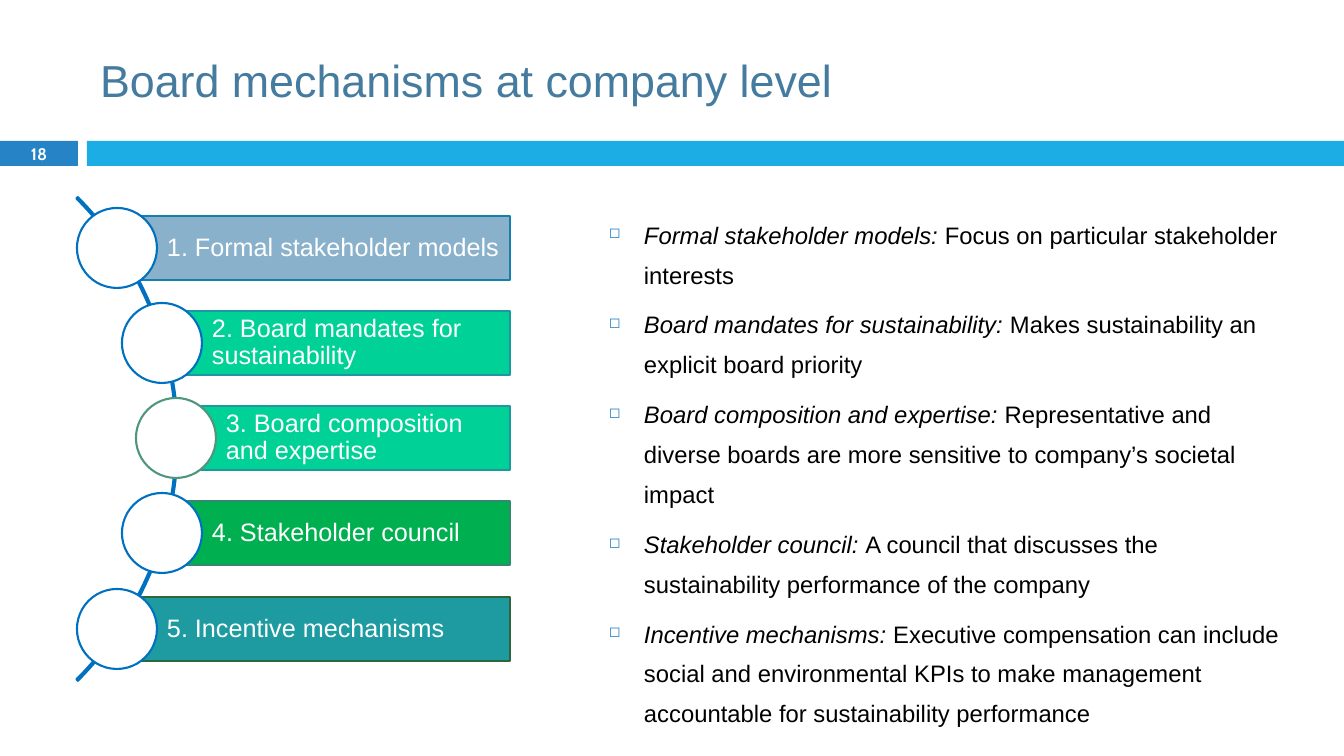
"""Build the slide on board mechanisms at company level."""
from dataclasses import dataclass

from lxml import etree
from pptx import Presentation
from pptx import util as u
from pptx.dml.color import RGBColor
from pptx.enum import shapes, text
from pptx.oxml.ns import qn

EMU_PER_PX = 914400 / 100.8
BAR_RIGHT, BAR_HEIGHT = 510, 64
CIRCLE = 80
FIRST_CENTRE, CENTRE_SPAN = 248, 381
BLUE, WHITE = "0070C0", "FFFFFF"


@dataclass(frozen=True)
class Mechanism:
    label: str
    left: int
    fill: str
    outline: str
    term: str
    meaning: str
    ring: str = BLUE


MECHANISMS = [
    Mechanism("1. Formal stakeholder models", 117, "89B1CB", "1580A9",
              "Formal stakeholder models: ",
              "Focus on particular stakeholder interests"),
    Mechanism("2. Board mandates for sustainability", 162, "00D297", "1D989F",
              "Board mandates for sustainability: ",
              "Makes sustainability an explicit board priority"),
    Mechanism("3. Board composition and expertise", 176, "00D297", "1D989F",
              "Board composition and expertise: ",
              "Representative and diverse boards are more sensitive to "
              "company’s societal impact", ring="4E977B"),
    Mechanism("4. Stakeholder council", 162, "00B050", "318A70",
              "Stakeholder council: ",
              "A council that discusses the sustainability performance of the company"),
    Mechanism("5. Incentive mechanisms", 117, "1D9BA1", "2E653D",
              "Incentive mechanisms: ",
              "Executive compensation can include social and environmental KPIs to "
              "make management accountable for sustainability performance"),
]


def px(length: int) -> int:
    return round(length * EMU_PER_PX)


def colour(hex_code: str) -> RGBColor:
    return RGBColor.from_string(hex_code)


def write(paragraph, words: str, *, size: float, ink: str, font: str = "Arial",
          bold: bool = False, italic: bool = False) -> None:
    run = paragraph.add_run()
    run.text = words
    run.font.size = u.Pt(size)
    run.font.name = font
    run.font.bold = bold
    run.font.italic = italic
    run.font.color.rgb = colour(ink)


def set_frame(frame, left: int, top: int, right: int, bottom: int, anchor) -> None:
    frame.word_wrap = True
    frame.auto_size = text.MSO_AUTO_SIZE.NONE
    frame.vertical_anchor = anchor
    frame.margin_left, frame.margin_top = px(left), px(top)
    frame.margin_right, frame.margin_bottom = px(right), px(bottom)


def add_figure(slide, kind, left: int, top: int, width: int, height: int, *,
               fill: str | None = None, outline: str | None = None):
    figure = slide.shapes.add_shape(kind, px(left), px(top), px(width), px(height))
    figure.shadow.inherit = False
    if fill:
        figure.fill.solid()
        figure.fill.fore_color.rgb = colour(fill)
    else:
        figure.fill.background()
    if outline:
        figure.line.color.rgb = colour(outline)
        figure.line.width = u.Pt(1.5)
    else:
        figure.line.fill.background()
    return figure


def add_bullet(paragraph) -> None:
    properties = paragraph._p.get_or_add_pPr()
    properties.set("marL", str(px(35)))
    properties.set("indent", str(px(-35)))
    tint = etree.SubElement(properties, qn("a:buClr"))
    etree.SubElement(tint, qn("a:srgbClr"), val="2683C6")
    etree.SubElement(properties, qn("a:buSzPct"), val="60000")
    etree.SubElement(properties, qn("a:buChar"), char="◻")


def add_header(slide) -> None:
    rectangle = shapes.MSO_SHAPE.RECTANGLE
    page = add_figure(slide, rectangle, 0, 141, 78, 25, fill="2683C6")
    add_figure(slide, rectangle, 87, 141, 1257, 25, fill="1CADE4")
    set_frame(page.text_frame, 0, 0, 0, 0, text.MSO_ANCHOR.MIDDLE)
    number = page.text_frame.paragraphs[0]
    number.alignment = text.PP_ALIGN.CENTER
    write(number, "18", size=11.9, ink=WHITE, font="Cabin", bold=True)

    heading = slide.shapes.title
    heading.left, heading.top = px(90), px(25)
    heading.width, heading.height = px(1198), px(109)
    set_frame(heading.text_frame, 10, 5, 10, 5, text.MSO_ANCHOR.MIDDLE)
    line = heading.text_frame.paragraphs[0]
    line.alignment = text.PP_ALIGN.LEFT
    write(line, "Board mechanisms at company level", size=32, ink="457B9E")


def add_mechanism(slide, mechanism: Mechanism, centre: int) -> None:
    bar = add_figure(slide, shapes.MSO_SHAPE.RECTANGLE,
                     mechanism.left, centre - BAR_HEIGHT // 2,
                     BAR_RIGHT - mechanism.left, BAR_HEIGHT,
                     fill=mechanism.fill, outline=mechanism.outline)
    set_frame(bar.text_frame, 50, 5, 5, 5, text.MSO_ANCHOR.MIDDLE)
    label = bar.text_frame.paragraphs[0]
    label.alignment = text.PP_ALIGN.LEFT
    label.line_spacing = 0.9
    write(label, mechanism.label, size=18, ink=WHITE)
    add_figure(slide, shapes.MSO_SHAPE.OVAL,
               mechanism.left - CIRCLE // 2, centre - CIRCLE // 2, CIRCLE, CIRCLE,
               fill=WHITE, outline=mechanism.ring)


def add_diagram(slide) -> None:
    arc = add_figure(slide, shapes.MSO_SHAPE.BLOCK_ARC, -506, 97, 684, 684, outline=BLUE)
    for position, value in enumerate((189, 27, 0.003)):
        arc.adjustments[position] = value
    for index, mechanism in enumerate(MECHANISMS):
        step = CENTRE_SPAN * index // (len(MECHANISMS) - 1)
        add_mechanism(slide, mechanism, FIRST_CENTRE + step)


def add_explanations(slide) -> None:
    frame = slide.shapes.add_textbox(px(599), px(204), px(694), px(527)).text_frame
    set_frame(frame, 10, 5, 10, 5, text.MSO_ANCHOR.TOP)
    for index, mechanism in enumerate(MECHANISMS):
        entry = frame.add_paragraph() if index else frame.paragraphs[0]
        entry.line_spacing = 1.4
        entry.space_before = u.Pt(7)
        add_bullet(entry)
        write(entry, mechanism.term, size=17, ink="000000", italic=True)
        write(entry, mechanism.meaning, size=17, ink="000000")


def main() -> None:
    deck = Presentation()
    deck.slide_width, deck.slide_height = px(1344), px(756)
    slide = deck.slides.add_slide(deck.slide_layouts.get_by_name("Title Only"))
    add_header(slide)
    add_diagram(slide)
    add_explanations(slide)
    deck.save("out.pptx")


if __name__ == "__main__":
    main()
